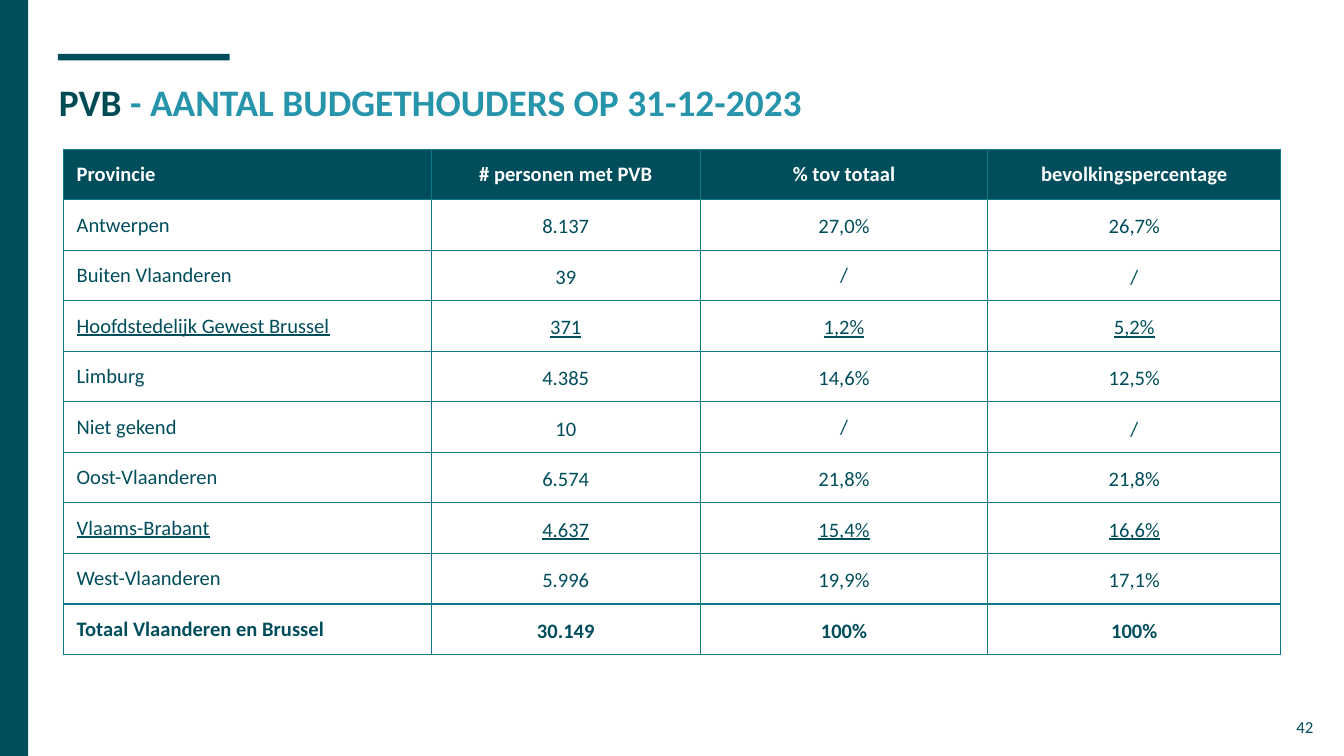
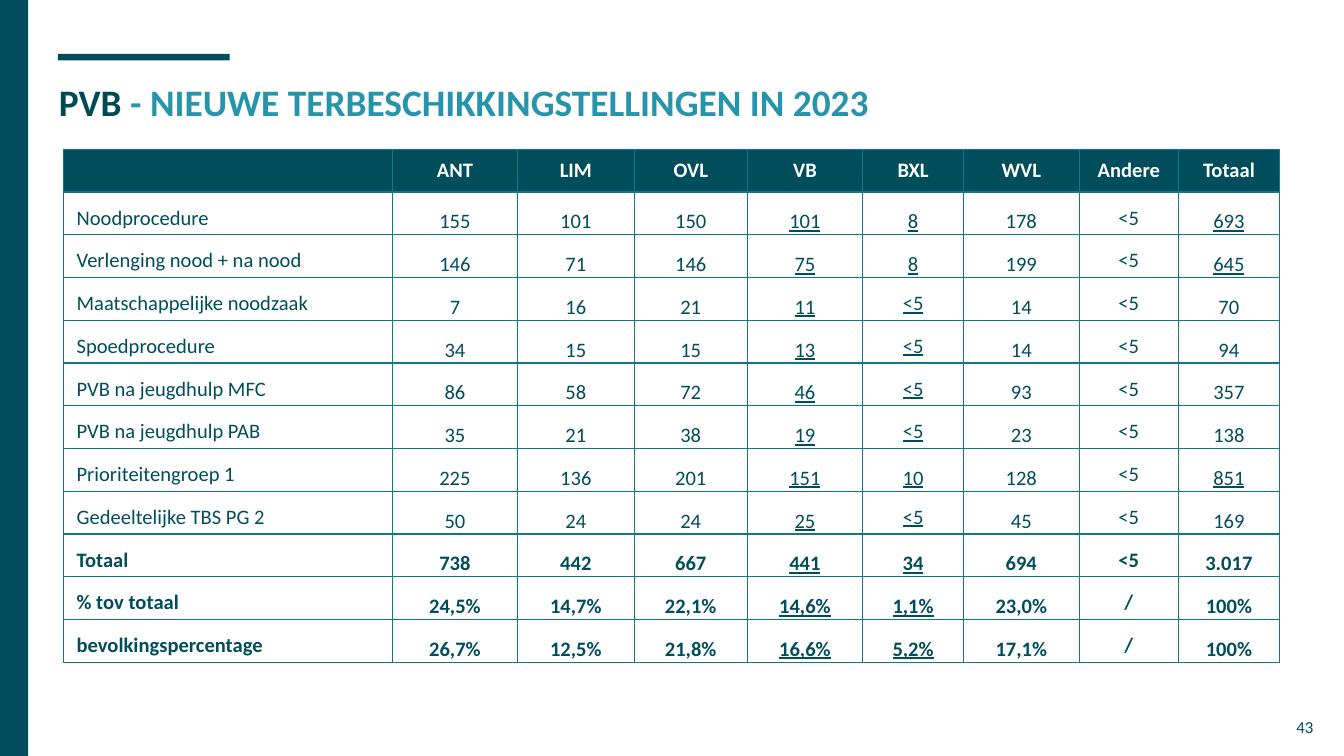
from lxml.etree import SubElement
from pptx import Presentation
from pptx.dml.color import RGBColor
from pptx.enum.shapes import MSO_SHAPE as Shape
from pptx.enum.text import MSO_ANCHOR as Anchor, PP_ALIGN as Align
from pptx.oxml.ns import qn
from pptx.util import Inches, Pt

DARK = RGBColor(0x00, 0x4D, 0x5C)
TITLE_DARK = RGBColor(0x00, 0x4B, 0x53)
ACCENT = RGBColor(0x26, 0x95, 0xAB)
GRID = RGBColor(0x11, 0x78, 0x8C)
WHITE = RGBColor(0xFF, 0xFF, 0xFF)
FONT = "Calibri"
PAGE_WIDTH = 10
PAGE_HEIGHT = PAGE_WIDTH * 9 / 16
TABLE_LEFT, TABLE_TOP = 0.47, 1.11

BUDGET_HOLDERS = """\
Provincie|# personen met PVB|% tov totaal|bevolkingspercentage
Antwerpen|8.137|27,0%|26,7%
Buiten Vlaanderen|39|/|/
Hoofdstedelijk Gewest Brussel|371|1,2%|5,2%
Limburg|4.385|14,6%|12,5%
Niet gekend|10|/|/
Oost-Vlaanderen|6.574|21,8%|21,8%
Vlaams-Brabant|4.637|15,4%|16,6%
West-Vlaanderen|5.996|19,9%|17,1%
Totaal Vlaanderen en Brussel|30.149|100%|100%"""

NEW_ALLOCATIONS = """\
|ANT|LIM|OVL|VB|BXL|WVL|Andere|Totaal
Noodprocedure|155|101|150|101|8|178|<5|693
Verlenging nood + na nood|146|71|146|75|8|199|<5|645
Maatschappelijke noodzaak|7|16|21|11|<5|14|<5|70
Spoedprocedure|34|15|15|13|<5|14|<5|94
PVB na jeugdhulp MFC|86|58|72|46|<5|93|<5|357
PVB na jeugdhulp PAB|35|21|38|19|<5|23|<5|138
Prioriteitengroep 1|225|136|201|151|10|128|<5|851
Gedeeltelijke TBS PG 2|50|24|24|25|<5|45|<5|169
Totaal|738|442|667|441|34|694|<5|3.017
% tov totaal|24,5%|14,7%|22,1%|14,6%|1,1%|23,0%|/|100%
bevolkingspercentage|26,7%|12,5%|21,8%|16,6%|5,2%|17,1%|/|100%"""


def add_run(paragraph, text, size, color, **style):
    run = paragraph.add_run()
    run.text = text
    run.font.color.rgb = color
    for name, value in dict(name=FONT, size=Pt(size), **style).items():
        setattr(run.font, name, value)


def add_bar(slide, *box):
    bar = slide.shapes.add_shape(Shape.RECTANGLE, *map(Inches, box))
    bar.shadow.inherit = False
    bar.fill.solid()
    bar.fill.fore_color.rgb = DARK
    bar.line.fill.background()


def add_text(slide, *box, anchor=Anchor.TOP):
    frame = slide.shapes.add_textbox(*map(Inches, box)).text_frame
    frame.word_wrap = True
    frame.vertical_anchor = anchor
    for side in ("left", "right", "top", "bottom"):
        setattr(frame, f"margin_{side}", Inches(0.1))
    return frame.paragraphs[0]


def add_page(deck, topic, number):
    slide = deck.slides.add_slide(deck.slide_layouts[6])
    add_bar(slide, 0.43, 0.4, 1.28, 0.05)
    add_bar(slide, 0, 0, 0.21, PAGE_HEIGHT)
    title = add_text(slide, 0.34, 0.49, 9.32, 0.63)
    add_run(title, "PVB ", 20, TITLE_DARK, bold=True)
    add_run(title, f"- {topic}", 20, ACCENT, bold=True)
    page_number = add_text(slide, 9.27, 5.19, 0.6, 0.43, anchor=Anchor.MIDDLE)
    page_number.alignment = Align.RIGHT
    add_run(page_number, str(number), 9, DARK)
    return slide


def add_borders(cell):
    properties = cell._tc.get_or_add_tcPr()
    for side in "LRTB":
        line = SubElement(properties, qn(f"a:ln{side}"), w=str(Pt(0.75)))
        fill = SubElement(line, qn("a:solidFill"))
        SubElement(fill, qn("a:srgbClr"), val=str(GRID))


def format_cell(cell, header, anchor, top):
    layout = dict(
        vertical_anchor=anchor,
        margin_left=Inches(0.1),
        margin_right=Inches(0.1),
        margin_top=Inches(top),
        margin_bottom=0,
    )
    for name, value in layout.items():
        setattr(cell, name, value)
    add_borders(cell)
    if header:
        cell.fill.solid()
        cell.fill.fore_color.rgb = DARK
    else:
        cell.fill.background()


def add_figures(slide, data, widths, height, first_bold, underlined, single_spaced,
                body_anchor=Anchor.MIDDLE, body_top=0):
    rows = [line.split("|") for line in data.splitlines()]
    box = map(Inches, (TABLE_LEFT, TABLE_TOP, sum(widths), height))
    table = slide.shapes.add_table(len(rows), len(widths), *box).table
    table.first_row = table.horz_banding = False
    for column, width in zip(table.columns, widths):
        column.width = Inches(width)
    for r, values in enumerate(rows):
        table.rows[r].height = Inches(height / len(rows))
        header = r == 0
        for c, value in enumerate(values):
            cell = table.cell(r, c)
            if header:
                format_cell(cell, header, Anchor.MIDDLE, 0)
            else:
                format_cell(cell, header, body_anchor, body_top)
            paragraph = cell.text_frame.paragraphs[0]
            if c:
                paragraph.alignment = Align.CENTER
                if not header and not single_spaced(c, value):
                    paragraph.line_spacing = 1.15
            if value:
                add_run(paragraph, value, 11, WHITE if header else DARK,
                        bold=header or r >= first_bold,
                        underline=not header and underlined(r, c))


def main():
    deck = Presentation()
    deck.slide_width, deck.slide_height = Inches(PAGE_WIDTH), Inches(PAGE_HEIGHT)

    holders = add_page(deck, "AANTAL BUDGETHOUDERS OP 31-12-2023", 42)
    add_figures(
        holders, BUDGET_HOLDERS, [2.74, 2, 2.14, 2.18], 3.76, first_bold=9,
        underlined=lambda r, c: r in (3, 7),
        single_spaced=lambda c, value: c == 2 and value == "/",
    )

    allocations = add_page(deck, "NIEUWE TERBESCHIKKINGSTELLINGEN IN 2023", 43)
    add_figures(
        allocations, NEW_ALLOCATIONS,
        [2.45, 0.93, 0.87, 0.84, 0.86, 0.75, 0.86, 0.74, 0.75], 3.82, first_bold=9,
        underlined=lambda r, c: c in (4, 5) or (c == 8 and r in (1, 2, 7)),
        single_spaced=lambda c, value: value in ("<5", "/"),
        body_anchor=Anchor.TOP, body_top=0.1,
    )
    deck.save("out.pptx")


if __name__ == "__main__":
    main()
